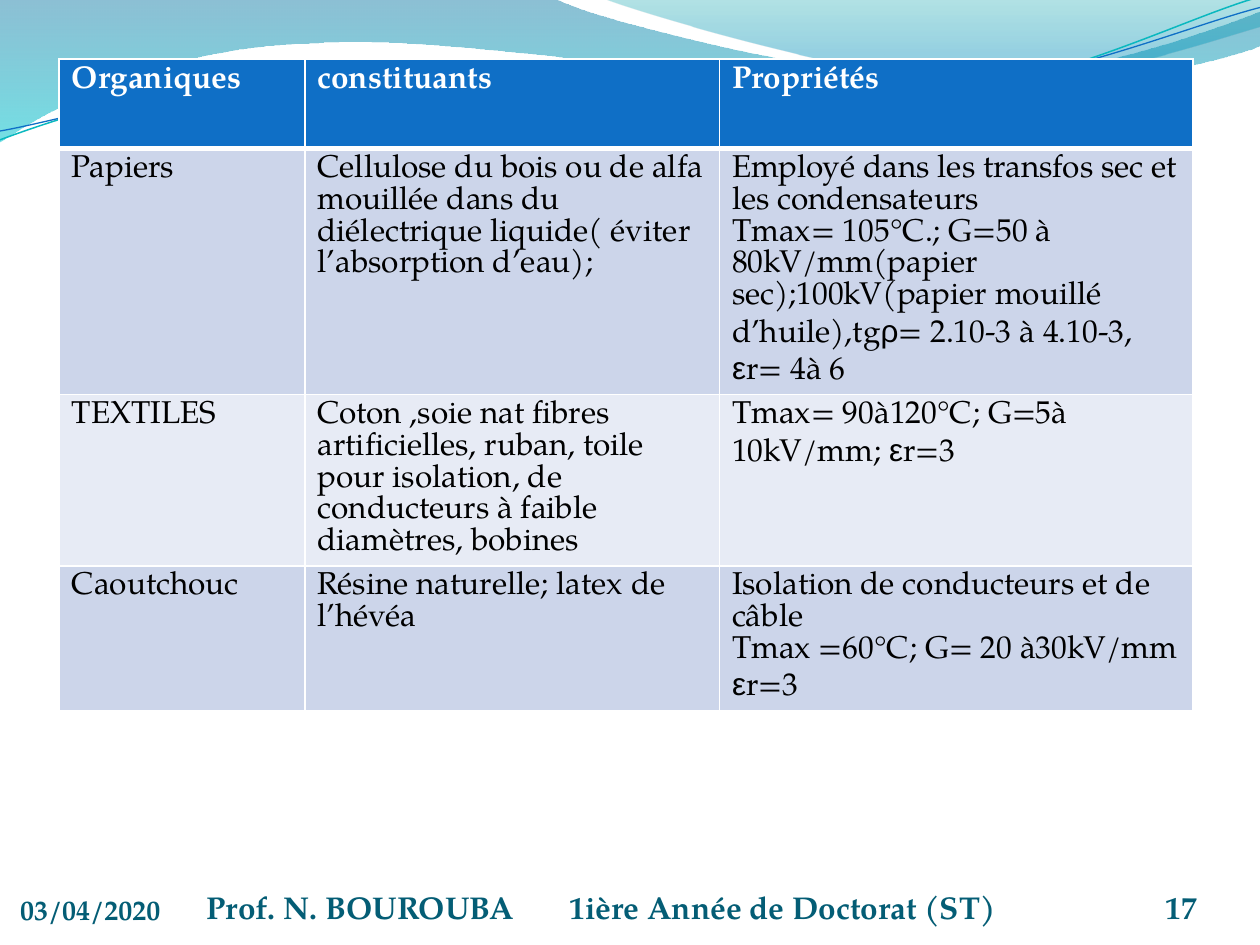
from math import cos, radians, sin

from lxml.etree import SubElement
from pptx import Presentation
from pptx.dml.color import RGBColor
from pptx.enum.text import MSO_ANCHOR, PP_ALIGN
from pptx.oxml.ns import qn
from pptx.util import Inches, Pt

SERIF = "TeX Gyre Pagella"
GREEK = "Arial"
TEAL = "045D75"
WHITE = "FFFFFF"
HEADER_FILL = "0F6FC6"
BAND_FILLS = ["CCD5EA", "E7EBF5"]

COLUMN_WIDTHS = [1.95, 3.29, 3.76]
ROW_HEIGHT = 0.71
TABLE_HEIGHT = 5.81
ROWS = [
    [["Organiques"], ["constituants"], ["Propriétés"]],
    [
        ["Papiers"],
        ["Cellulose du bois ou de alfa mouillée dans du diélectrique liquide( éviter l’absorption d’eau);"],
        [
            "Employé dans les transfos sec et les condensateurs",
            "Tmax= 105°C.; G=50 à 80kV/mm(papier sec);100kV(papier mouillé d’huile),tg|ρ|= 2.10-3 à 4.10-3, |ε|r= 4à 6",
        ],
    ],
    [
        ["TEXTILES"],
        ["Coton ,soie nat fibres artificielles, ruban, toile pour isolation, de conducteurs à faible diamètres, bobines"],
        ["Tmax= 90à120°C; G=5à 10kV/mm; |ε|r=3"],
    ],
    [
        ["Caoutchouc"],
        ["Résine naturelle; latex de l’hévéa"],
        [
            "Isolation de conducteurs et de câble",
            "Tmax =60°C; G= 20 à30kV/mm |ε|r=3",
        ],
    ],
]

FOOTERS = [
    ("03/04/2020", 0.16, 1.14, 16, PP_ALIGN.LEFT),
    ("17", 8.67, 0.83, 18, PP_ALIGN.RIGHT),
    ("Prof. N. BOUROUBA\t1ière Année de Doctorat (ST)", 1.64, 6.72, 18, PP_ALIGN.LEFT),
]
FOOTER_TAB = 2.88

WAVE_TILT = 2.7
WAVES = [
    {
        "outline": [
            (0, 0), (4.4, -0.01),
            (4.76, 0.17, 6.64, 0.63, 7.58, 0.63), (8.53, 0.63, 9.58, 0.26, 10, 0.09),
            (10.01, 0.36),
            (9.83, 0.44, 8.7, 0.76, 7.46, 0.75), (6.22, 0.75, 3.82, 0.28, 2.57, 0.34),
            (1.29, 0.36, 0.46, 0.83, -0.01, 1.13),
        ],
        "stops": [(0, "0074A1", 45), (1, "00C6CF", 55)],
    },
    {
        "outline": [
            (4.79, -0.01),
            (5.09, 0.11, 6.82, 0.62, 7.69, 0.65), (8.56, 0.69, 9.61, 0.32, 10, 0.21),
            (10, 0),
        ],
        "stops": [(0, "00A1A9", 30), (0.8, "008BBF", 45)],
    },
    {
        "outline": [
            (0, 1.11),
            (0.48, 0.93, 1.58, 0.57, 2.77, 0.52), (3.95, 0.47, 5.93, 0.89, 7.13, 0.8),
            (8.33, 0.71, 9.38, 0.15, 9.98, -0.02),
        ],
        "line": ("0AB8BF", 0.85),
        "center": (4.99, 0.58),
    },
    {
        "outline": [
            (0, 1.04),
            (0.47, 0.96, 1.64, 0.61, 2.83, 0.56), (4.03, 0.51, 5.97, 0.84, 7.17, 0.75),
            (8.36, 0.67, 9.41, 0.21, 10, 0.06),
        ],
        "line": ("0F6FC6", 0.75),
        "center": (5, 0.59),
    },
]


def color(value):
    return RGBColor.from_string(value)


def turn(point, center, degrees):
    across, down = point[0] - center[0], point[1] - center[1]
    cosine, sine = cos(radians(degrees)), sin(radians(degrees))
    return center[0] + across * cosine - down * sine, center[1] + across * sine + down * cosine


def add_outline(page, wave):
    outline = wave["outline"]
    points = [segment[i:i + 2] for segment in outline for i in range(0, len(segment), 2)]
    if "center" in wave:
        points = [turn(point, wave["center"], WAVE_TILT) for point in points]
    points = [(Inches(x), Inches(y)) for x, y in points]
    builder = page.shapes.build_freeform(*points[0])
    builder.add_line_segments(points[1:], close="stops" in wave)
    shape = builder.convert_to_shape()
    lines = iter(list(shape.element.iter(qn("a:lnTo"))))
    for segment in outline[1:]:
        first = next(lines)
        if len(segment) == 6:
            first.tag = qn("a:cubicBezTo")
            for _ in range(2):
                extra = next(lines)
                first.append(extra[0])
                extra.getparent().remove(extra)
    if "center" in wave:
        shape.rotation = 360 - WAVE_TILT
    return shape


def add_wave(page, wave):
    shape = add_outline(page, wave)
    shape.shadow.inherit = False
    if "line" in wave:
        line_color, width = wave["line"]
        shape.fill.background()
        shape.line.color.rgb = color(line_color)
        shape.line.width = Pt(width)
        return
    shape.line.fill.background()
    shape.fill.gradient()
    shape.fill.gradient_angle = 270
    for stop, (position, stop_color, _) in zip(shape.fill.gradient_stops, wave["stops"]):
        stop.position = position
        stop.color.rgb = color(stop_color)
    tints = list(shape.element.spPr.iter(qn("a:srgbClr")))
    for tint, (_, _, opacity) in zip(tints, wave["stops"]):
        SubElement(tint, qn("a:alpha")).set("val", str(opacity * 1000))


def add_span(para, text, size, text_color, bold, font=SERIF):
    span = para.add_run()
    span.text = text
    span.font.name = font
    span.font.size = Pt(size)
    span.font.bold = bold
    span.font.color.rgb = color(text_color)


def add_borders(cell, widths):
    for side, width in widths.items():
        border = SubElement(cell._tc.get_or_add_tcPr(), qn(f"a:ln{side}"), w=str(Pt(width)))
        SubElement(SubElement(border, qn("a:solidFill")), qn("a:srgbClr"), val=WHITE)


def add_properties_table(page):
    frame = page.shapes.add_table(
        len(ROWS), len(COLUMN_WIDTHS), Inches(0.47), Inches(0.47),
        Inches(sum(COLUMN_WIDTHS)), Inches(TABLE_HEIGHT),
    )
    table = frame.table
    for column, width in zip(table.columns, COLUMN_WIDTHS):
        column.width = Inches(width)
    for row_index, row in enumerate(ROWS):
        header = row_index == 0
        table.rows[row_index].height = Inches(ROW_HEIGHT)
        for column_index, paragraphs in enumerate(row):
            cell = table.cell(row_index, column_index)
            add_borders(cell, {"L": 1, "R": 1, "T": 3 if row_index == 1 else 1, "B": 3 if header else 1})
            cell.fill.solid()
            cell.fill.fore_color.rgb = color(HEADER_FILL if header else BAND_FILLS[(row_index - 1) % 2])
            for index, text in enumerate(paragraphs):
                box = cell.text_frame
                para = box.add_paragraph() if index else box.paragraphs[0]
                for part in text.split("|"):
                    font = GREEK if part in ("ρ", "ε") else SERIF
                    add_span(para, part, 18, WHITE if header else "000000", header, font)
    frame.height = Inches(TABLE_HEIGHT)


def add_footer(page, text, left, width, size, alignment):
    box = page.shapes.add_textbox(Inches(left), Inches(6.95), Inches(width), Inches(0.4)).text_frame
    box.word_wrap = True
    box.vertical_anchor = MSO_ANCHOR.BOTTOM
    box.margin_left = box.margin_right = box.margin_top = box.margin_bottom = 0
    para = box.paragraphs[0]
    para.alignment = alignment
    if "\t" in text:
        tabs = SubElement(para._p.get_or_add_pPr(), qn("a:tabLst"))
        SubElement(tabs, qn("a:tab"), pos=str(Inches(FOOTER_TAB)), algn="l")
    add_span(para, text, size, TEAL, True)


def main():
    deck = Presentation()
    deck.slide_width = Inches(10)
    deck.slide_height = Inches(7.5)
    page = deck.slides.add_slide(deck.slide_layouts[6])
    for wave in WAVES:
        add_wave(page, wave)
    add_properties_table(page)
    for footer in FOOTERS:
        add_footer(page, *footer)
    deck.save("out.pptx")


if __name__ == "__main__":
    main()
